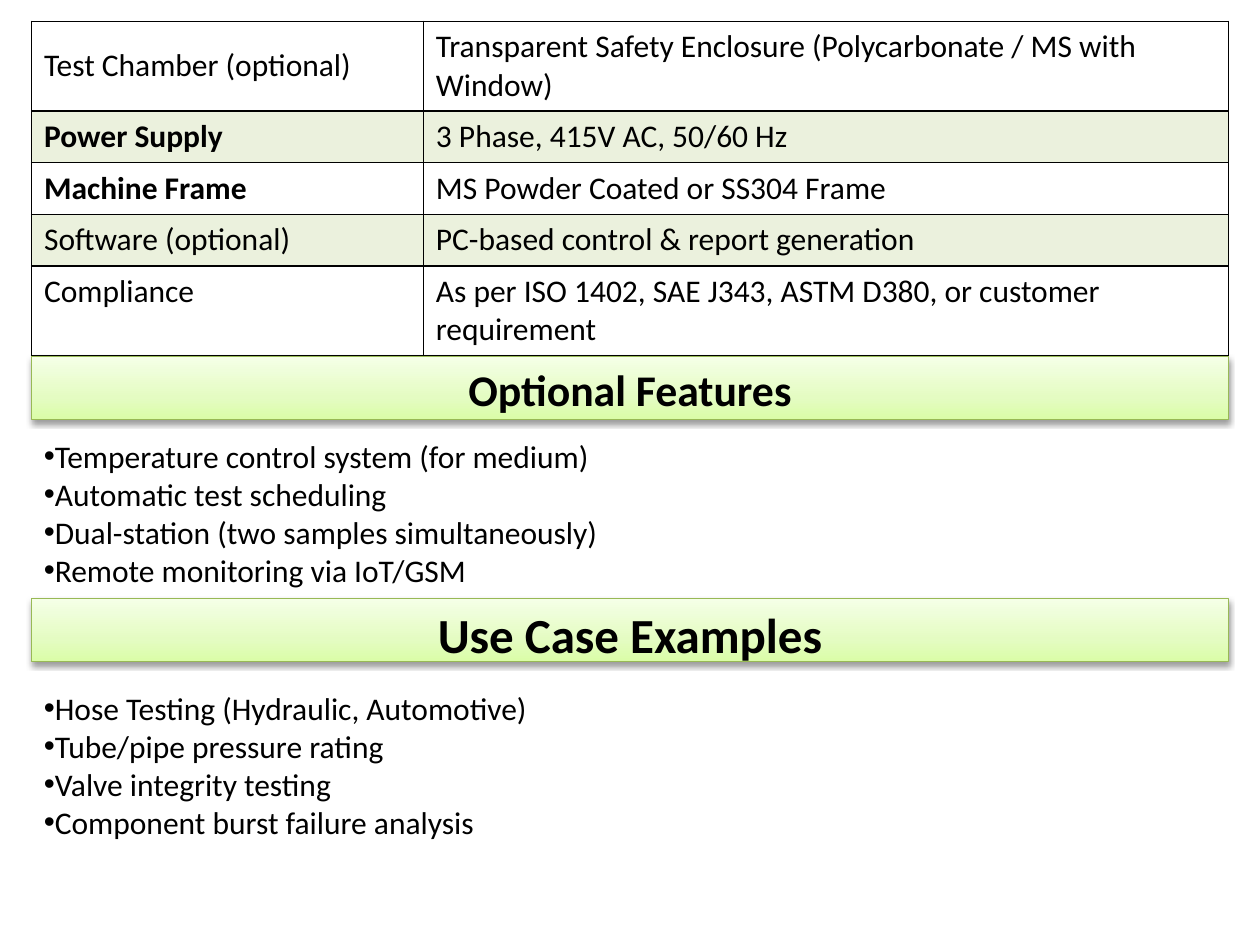
import copy
import pptx
import pptx.util
import pptx.dml.color
import pptx.enum.shapes
import pptx.enum.text
import pptx.oxml
import pptx.oxml.ns
from pptx.util import Inches

NS = 'xmlns:a="http://schemas.openxmlformats.org/drawingml/2006/main"'
ROWS = [
    ("Test Chamber (optional)", "Transparent Safety Enclosure (Polycarbonate / MS with Window)"),
    ("Power Supply", "3 Phase, 415V AC, 50/60 Hz"),
    ("Machine Frame", "MS Powder Coated or SS304 Frame"),
    ("Software (optional)", "PC-based control & report generation"),
    ("Compliance", "As per ISO 1402, SAE J343, ASTM D380, or customer requirement"),
]
ROW_HEIGHTS = [0.71, 0.41, 0.41, 0.41, 0.71]
BOLD_LABELS = ("Power Supply", "Machine Frame")
TOP_LABELS = ("Software (optional)", "Compliance")
FEATURES = [
    "Temperature control system (for medium)",
    "Automatic test scheduling",
    "Dual-station (two samples simultaneously)",
    "Remote monitoring via IoT/GSM",
]
USE_CASES = [
    "Hose Testing (Hydraulic, Automotive)",
    "Tube/pipe pressure rating",
    "Valve integrity testing",
    "Component burst failure analysis",
]


def rgb(value):
    return pptx.dml.color.RGBColor.from_string(value)


class SlideBuilder:
    font = "Calibri"
    text_color = "000000"
    accent = "9BBB59"
    banner_line = "98B955"
    banner_stops = [(0, "DAFDA7"), (0.35, "E4FCC2"), (1, "F5FFE7")]
    left = Inches(0.25)
    width = Inches(9.5)

    def __init__(self, prs):
        self.s = prs.slides.add_slide(prs.slide_layouts[6])

    def format_runs(self, p, size, bold=False):
        for r in p.runs:
            r.font.name = self.font
            r.font.size = pptx.util.Pt(size)
            r.font.bold = bold
            r.font.color.rgb = rgb(self.text_color)

    def cell(self, cell, text, bold, shaded, top):
        anchor = pptx.enum.text.MSO_ANCHOR
        cell.text = text
        cell.vertical_anchor = anchor.TOP if top else anchor.MIDDLE
        self.format_runs(cell.text_frame.paragraphs[0], 18, bold)
        tcPr = cell._tc.get_or_add_tcPr()
        for side in ("lnL", "lnR", "lnT", "lnB"):
            tcPr.append(pptx.oxml.parse_xml(
                f'<a:{side} {NS} w="12700"><a:solidFill>'
                f'<a:srgbClr val="{self.text_color}"/></a:solidFill></a:{side}>'))
        if shaded:
            cell.fill.solid()
            cell.fill.fore_color.rgb = rgb(self.accent)
            color = tcPr.find(pptx.oxml.ns.qn("a:solidFill"))[0]
            color.append(pptx.oxml.parse_xml(f'<a:alpha {NS} val="20000"/>'))
        else:
            cell.fill.background()

    def table(self, top, rows, heights, widths):
        frame = self.s.shapes.add_table(len(rows), len(widths), self.left, Inches(top),
                                        self.width, Inches(sum(heights)))
        table = frame.table
        table.first_row = False
        table.horz_banding = False
        for column, width in zip(table.columns, widths):
            column.width = Inches(width)
        for i, (label, value) in enumerate(rows):
            table.rows[i].height = Inches(heights[i])
            shaded = i % 2 == 1
            self.cell(table.cell(i, 0), label, label in BOLD_LABELS, shaded, label in TOP_LABELS)
            self.cell(table.cell(i, 1), value, False, shaded, False)

    def banner(self, top, text, size):
        sp = self.s.shapes.add_shape(pptx.enum.shapes.MSO_SHAPE.RECTANGLE, self.left,
                                     Inches(top), self.width, Inches(0.5))
        sp.fill.gradient()
        sp.fill.gradient_angle = 90
        stop_list = next(sp._element.spPr.iter(pptx.oxml.ns.qn("a:gsLst")))
        stop_list.insert(1, copy.deepcopy(stop_list[0]))
        for stop, (position, color) in zip(sp.fill.gradient_stops, self.banner_stops):
            stop.position = position
            stop.color.rgb = rgb(color)
        sp.line.color.rgb = rgb(self.banner_line)
        sp.line.width = pptx.util.Pt(0.75)
        sp.shadow.inherit = False
        effects = sp._element.spPr.find(pptx.oxml.ns.qn("a:effectLst"))
        effects.append(pptx.oxml.parse_xml(
            f'<a:outerShdw {NS} blurRad="40000" dist="20000" dir="5400000" rotWithShape="0">'
            '<a:srgbClr val="000000"><a:alpha val="38000"/></a:srgbClr></a:outerShdw>'))
        tf = sp.text_frame
        tf.word_wrap = True
        tf.vertical_anchor = pptx.enum.text.MSO_ANCHOR.TOP
        tf.text = text
        p = tf.paragraphs[0]
        p.alignment = pptx.enum.text.PP_ALIGN.CENTER
        self.format_runs(p, size, True)

    def bullets(self, top, width, height, items):
        sp = self.s.shapes.add_textbox(self.left, Inches(top), Inches(width), Inches(height))
        tf = sp.text_frame
        tf.word_wrap = True
        tf.auto_size = pptx.enum.text.MSO_AUTO_SIZE.SHAPE_TO_FIT_TEXT
        tf.text = "\n".join(items)
        for p in tf.paragraphs:
            pPr = p._p.get_or_add_pPr()
            pPr.append(pptx.oxml.parse_xml(f'<a:buFont {NS} typeface="Arial"/>'))
            pPr.append(pptx.oxml.parse_xml(f'<a:buChar {NS} char="•"/>'))
            self.format_runs(p, 18)


def main():
    prs = pptx.Presentation()
    prs.slide_width = Inches(10)
    prs.slide_height = Inches(7.5)
    slide = SlideBuilder(prs)
    slide.table(0.17, ROWS, ROW_HEIGHTS, [3.11, 6.39])
    slide.bullets(3.42, 5, 1.31, FEATURES)
    slide.banner(2.83, "Optional Features", 25)
    slide.banner(4.75, "Use Case Examples", 28)
    slide.bullets(5.42, 4.25, 1.62, USE_CASES)
    prs.save("out.pptx")


if __name__ == "__main__":
    main()
